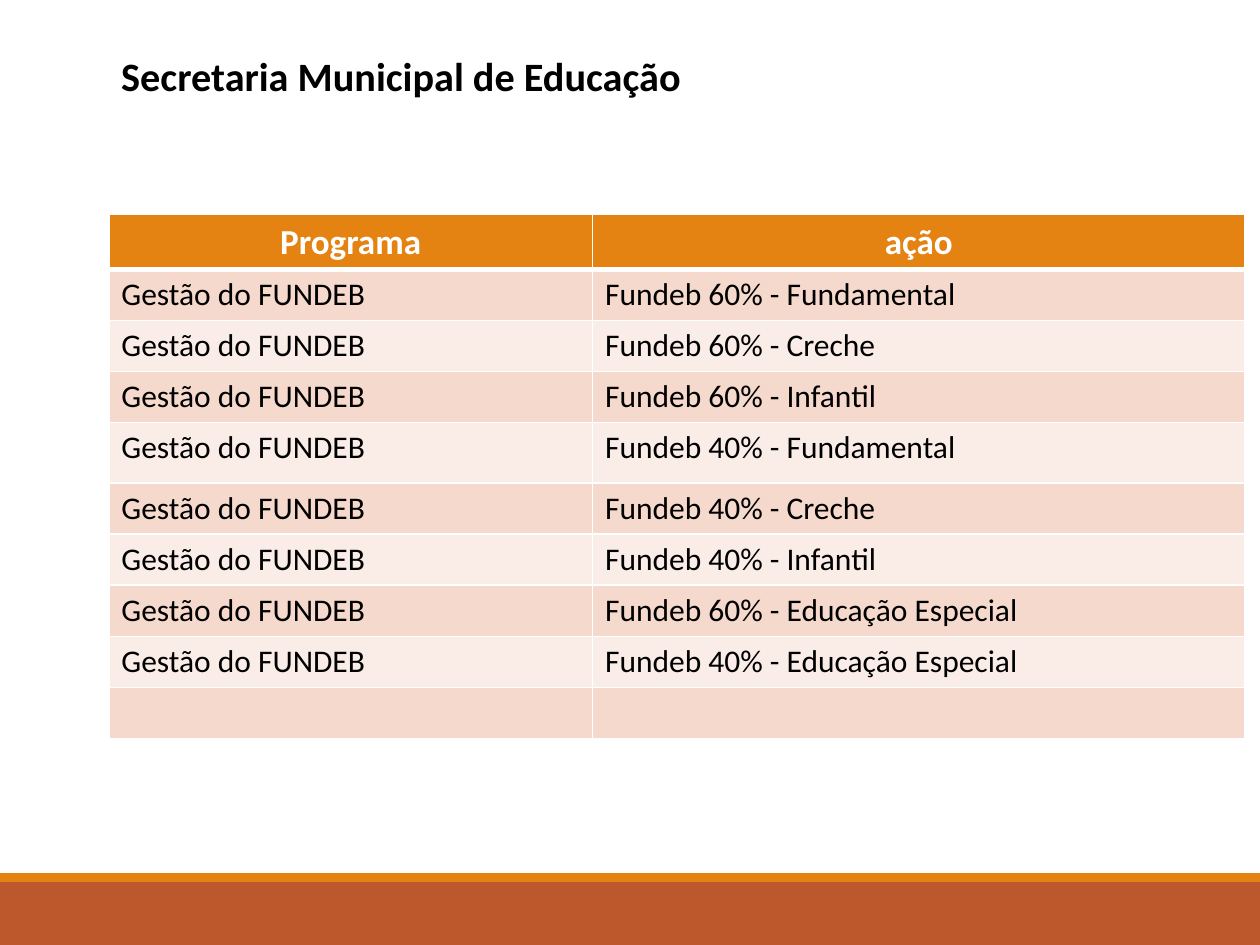
from pptx import Presentation
from pptx import util as u
from pptx.dml.color import RGBColor
from pptx.enum import shapes, text
from pptx.oxml import parse_xml
from pptx.oxml.ns import nsdecls

TITLE = "Secretaria Municipal de Educação"
HEADER = ("Programa", "ação")
PROGRAM = "Gestão do FUNDEB"
ACTIONS = [
    "Fundeb 60% - Fundamental",
    "Fundeb 60% - Creche",
    "Fundeb 60% - Infantil",
    "Fundeb 40% - Fundamental",
    "Fundeb 40% - Creche",
    "Fundeb 40% - Infantil",
    "Fundeb 60% - Educação Especial",
    "Fundeb 40% - Educação Especial",
]
ROWS = [HEADER] + [(PROGRAM, action) for action in ACTIONS] + [("", "")]

THEME = dict(
    font="Calibri", title=23, header=20, body=18,
    black="000000", white="FFFFFF", orange="E48312", rust="BD582C",
    bands=("F5D9CC", "FAEDE7"),
)
SLIDE_W, SLIDE_H = 720, 540
LEFT = 62.2
COL_WIDTHS = (276.4, 373)
ROW_H, TALL_ROW, TALL_H = 29.2, 4, 34.6
FOOTER_H, STRIPE_H = 36, 5

ALIGN = text.PP_ALIGN


def put_text(tf, words, size, color=THEME["black"], bold=False, align=ALIGN.LEFT):
    p = tf.paragraphs[0]
    p.alignment = align
    r = p.add_run()
    r.text = words
    r.font.name = THEME["font"]
    r.font.size = u.Pt(size)
    r.font.bold = bold
    r.font.color.rgb = RGBColor.from_string(color)


def add_band(s, top, height, color):
    sp = s.shapes.add_shape(shapes.MSO_SHAPE.RECTANGLE, 0, u.Pt(top),
                            u.Pt(SLIDE_W), u.Pt(height))
    sp.shadow.inherit = False
    sp.fill.solid()
    sp.fill.fore_color.rgb = RGBColor.from_string(color)
    sp.line.fill.background()


def style_cell(cell, fill, bottom=1):
    """Fill the cell and give it white borders, with its own bottom width in points."""
    tc_pr = cell._tc.get_or_add_tcPr()
    for side, width in (("L", 1), ("R", 1), ("T", 1), ("B", bottom)):
        tc_pr.append(parse_xml(
            f'<a:ln{side} {nsdecls("a")} w="{u.Pt(width)}"><a:solidFill>'
            f'<a:srgbClr val="{THEME["white"]}"/></a:solidFill></a:ln{side}>'))
    cell.fill.solid()
    cell.fill.fore_color.rgb = RGBColor.from_string(fill)


def add_program_table(s):
    table = s.shapes.add_table(
        len(ROWS), len(COL_WIDTHS), u.Pt(LEFT), u.Pt(122.6),
        u.Pt(sum(COL_WIDTHS)), u.Pt(ROW_H * (len(ROWS) - 1) + TALL_H)).table
    for col, width in zip(table.columns, COL_WIDTHS):
        col.width = u.Pt(width)
    for i, row in enumerate(ROWS):
        table.rows[i].height = u.Pt(TALL_H if i == TALL_ROW else ROW_H)
        for j, words in enumerate(row):
            cell = table.cell(i, j)
            if i == 0:
                style_cell(cell, THEME["orange"], bottom=3)
                put_text(cell.text_frame, words, THEME["header"],
                         color=THEME["white"], bold=True, align=ALIGN.CENTER)
                continue
            style_cell(cell, THEME["bands"][(i - 1) % 2], bottom=1)
            if words:
                put_text(cell.text_frame, words, THEME["body"],
                         align=ALIGN.JUSTIFY if j else ALIGN.LEFT)


def main():
    prs = Presentation()
    prs.slide_width, prs.slide_height = u.Pt(SLIDE_W), u.Pt(SLIDE_H)
    s = prs.slides.add_slide(prs.slide_layouts[6])

    footer_top = SLIDE_H - FOOTER_H
    add_band(s, footer_top, FOOTER_H, THEME["rust"])
    add_band(s, footer_top - STRIPE_H, STRIPE_H, THEME["orange"])

    tf = s.shapes.add_textbox(u.Pt(LEFT), u.Pt(26), u.Pt(608), u.Pt(35.3)).text_frame
    tf.word_wrap = True
    tf.auto_size = text.MSO_AUTO_SIZE.SHAPE_TO_FIT_TEXT
    put_text(tf, TITLE, THEME["title"], bold=True)

    add_program_table(s)
    prs.save("out.pptx")


if __name__ == "__main__":
    main()
